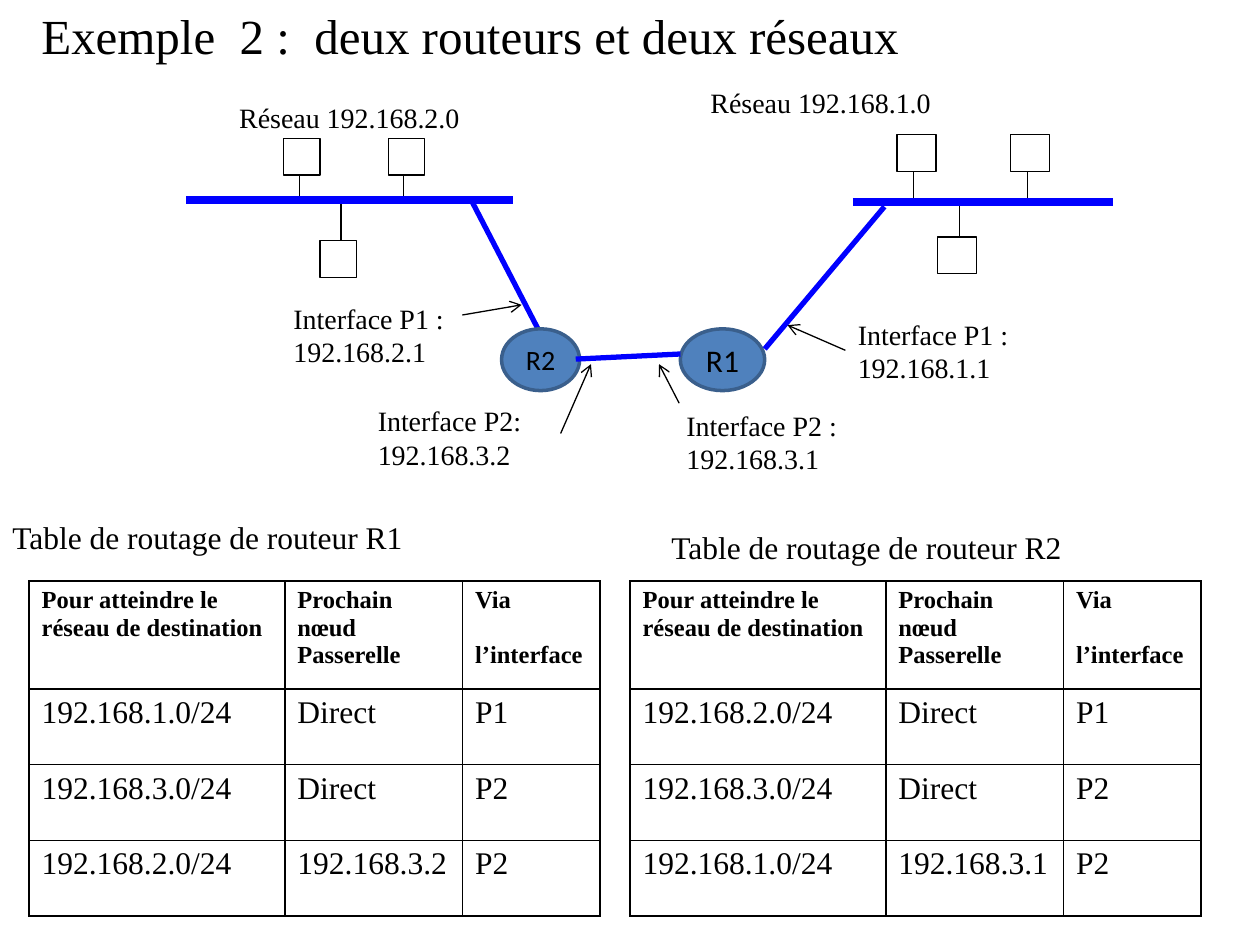
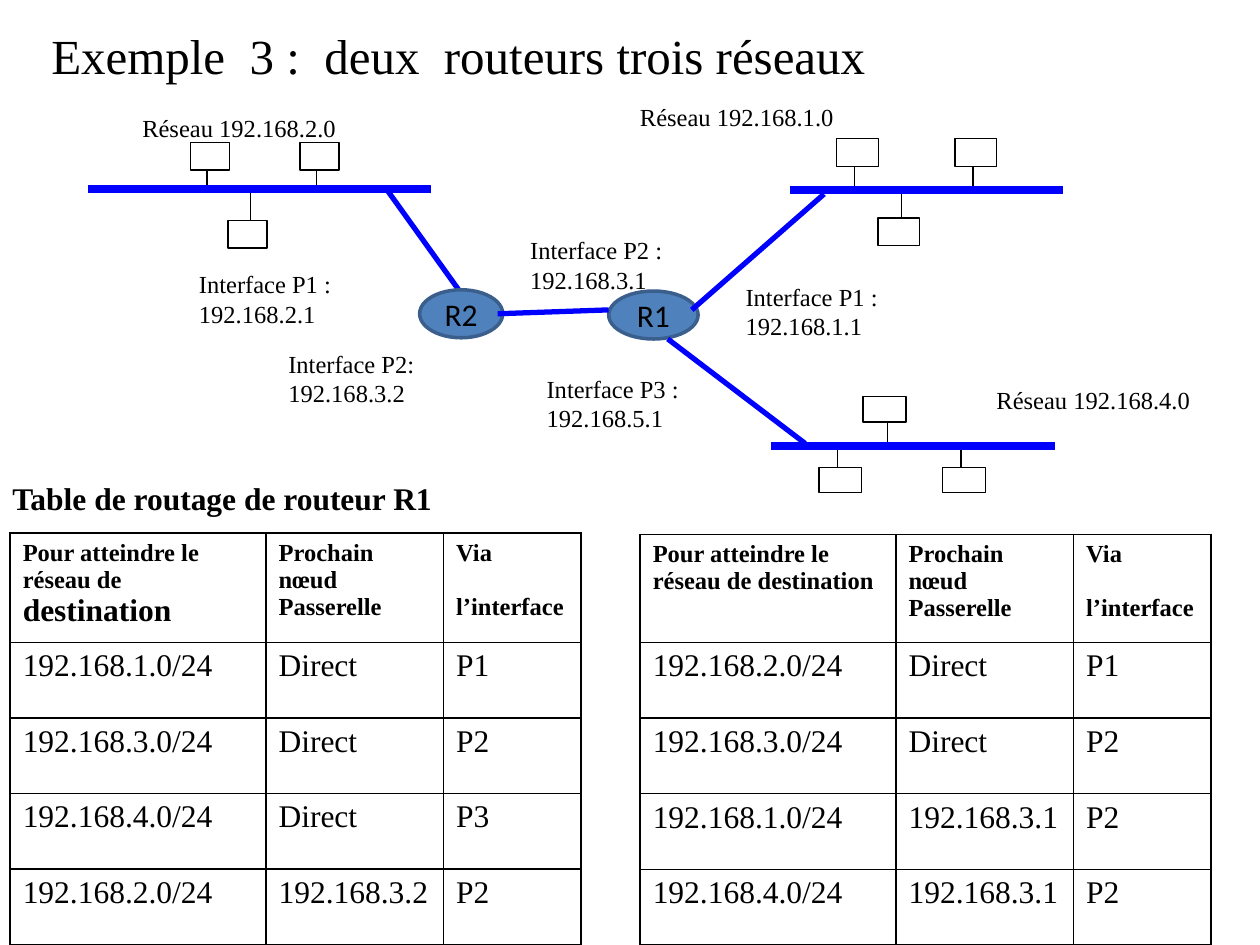
import pptx
import pptx.dml.color
import pptx.enum.shapes
import pptx.enum.text
import pptx.oxml
import pptx.oxml.ns
import pptx.util

Pt = pptx.util.Pt
SHAPE = pptx.enum.shapes.MSO_SHAPE
ANCHOR = pptx.enum.text.MSO_ANCHOR
ALIGN = pptx.enum.text.PP_ALIGN

# Shared style
SERIF, SANS = "Times New Roman", "Calibri"
BLACK, WHITE = "000000", "FFFFFF"
CABLE, ROUTER_FILL, ROUTER_LINE = "0000FF", "4F81BD", "3A5F8C"
COLUMNS = (146.2, 101.5, 78.5)
HEADER_HEIGHT, ROW_HEIGHT = 61.9, 43.2
HEADERS = (
    ("Pour atteindre le", "réseau de destination"),
    ("Prochain", "nœud Passerelle"),
    ("Via", "l’interface"),
)
# Where a stub meets its host, as a share of the host's width
PAIR_STUB, SINGLE_STUB = 0.43, 0.57


def color(hex_text):
    return pptx.dml.color.RGBColor.from_string(hex_text)


def set_font(p, size, name=SERIF, bold=False):
    p.font.name = name
    p.font.size = Pt(size)
    p.font.bold = bold
    p.font.color.rgb = color(BLACK)


def fill_lines(tf, lines, size, bold=False):
    for i, line_text in enumerate(lines):
        p = tf.paragraphs[0] if i == 0 else tf.add_paragraph()
        p.text = line_text
        set_font(p, size, bold=bold)


def text(s, x, y, w, h, lines, size, bold=False):
    tf = s.shapes.add_textbox(Pt(x), Pt(y), Pt(w), Pt(h)).text_frame
    tf.word_wrap = True
    tf.vertical_anchor = ANCHOR.MIDDLE
    fill_lines(tf, lines, size, bold)


def title(s, x, y, words):
    text(s, x, y, 648, 40.3, [words], 28)


def caption(s, x, y, router_name, bold=False):
    text(s, x, y, 280, 28.8, [f"Table de routage de routeur {router_name}"], 18, bold)


def network_label(s, x, y, address, size):
    text(s, x, y, size * 9.6, size * 1.7, [f"Réseau {address}"], size)


def interface_label(s, x, y, port, address, size):
    text(s, x, y, size * 7.2, size * 2.9, [f"Interface {port}", address], size)


def line(s, start, end, hex_text=BLACK, width=0.75, arrow=False):
    c = s.shapes.add_connector(
        pptx.enum.shapes.MSO_CONNECTOR.STRAIGHT, *map(Pt, start + end))
    c.line.color.rgb = color(hex_text)
    c.line.width = Pt(width)
    if arrow:
        ln = c.line._get_or_add_ln()
        ln.append(pptx.oxml.parse_xml(
            f'<a:tailEnd {pptx.oxml.ns.nsdecls("a")} type="arrow"/>'))
    c._element.spPr.append(pptx.oxml.parse_xml(
        f'<a:effectLst {pptx.oxml.ns.nsdecls("a")}/>'))


def link(s, start, end):
    line(s, start, end, CABLE, 3)


def shape(s, kind, x, y, w, h, fill, outline, width):
    sp = s.shapes.add_shape(kind, Pt(x), Pt(y), Pt(w), Pt(h))
    sp.shadow.inherit = False
    sp.fill.solid()
    sp.fill.fore_color.rgb = color(fill)
    sp.line.color.rgb = color(outline)
    sp.line.width = Pt(width)
    return sp


def router(s, x, y, w, h, name, size):
    sp = shape(s, SHAPE.OVAL, x, y, w, h, ROUTER_FILL, ROUTER_LINE, 2)
    tf = sp.text_frame
    tf.vertical_anchor = ANCHOR.MIDDLE
    p = tf.paragraphs[0]
    p.text = name
    p.alignment = ALIGN.CENTER
    set_font(p, size, SANS)


def network(s, bus, y, host, pair, pair_top, single, single_top, stub_y=None):
    """A bus from bus[0] to bus[1] with two hosts on one side, one on the other."""
    w, h = host
    stub_y = stub_y or y
    hosts = [(x, pair_top, PAIR_STUB) for x in pair]
    hosts.append((single, single_top, SINGLE_STUB))
    for x, top, share in hosts:
        shape(s, SHAPE.RECTANGLE, x, top, w, h, WHITE, BLACK, 0.75)
        edge = top + h if top < y else top
        line(s, (x + w * share, edge), (x + w * share, stub_y))
    line(s, (bus[0], y), (bus[1], y), CABLE, 4.5)


def style_cell(cell):
    tc_pr = cell._tc.get_or_add_tcPr()
    for side in ("lnL", "lnR", "lnT", "lnB"):
        tc_pr.append(pptx.oxml.parse_xml(
            f'<a:{side} {pptx.oxml.ns.nsdecls("a")} w="12700"><a:solidFill>'
            f'<a:srgbClr val="{BLACK}"/></a:solidFill></a:{side}>'))
    cell.fill.solid()
    cell.fill.fore_color.rgb = color(WHITE)


def routing_table(s, x, y, routes):
    height = HEADER_HEIGHT + ROW_HEIGHT * len(routes)
    table = s.shapes.add_table(len(routes) + 1, len(COLUMNS), Pt(x), Pt(y),
                               Pt(sum(COLUMNS)), Pt(height)).table
    table.horz_banding = False
    for column, width in zip(table.columns, COLUMNS):
        column.width = Pt(width)
    for i, row in enumerate(table.rows):
        row.height = Pt(ROW_HEIGHT if i else HEADER_HEIGHT)
    for j, lines in enumerate(HEADERS):
        fill_lines(table.cell(0, j).text_frame, lines, 14, True)
    table.cell(0, 2).text_frame.paragraphs[1].space_before = Pt(15.5)
    for i, route in enumerate(routes, 1):
        for j, value in enumerate(route):
            fill_lines(table.cell(i, j).text_frame, [value], 18)
    for cell in table.iter_cells():
        style_cell(cell)
    return table


def enlarge_last_word(p, size):
    first, last = p.text.rsplit(" ", 1)
    p.runs[0].text = first + " "
    r = p.add_run()
    r.text = last
    r.font.size = Pt(size)


def two_networks(s):
    # Networks and routers
    network_label(s, 129.6, 53.3, "192.168.2.0", 16)
    network_label(s, 398.9, 45, "192.168.1.0", 16)
    link(s, (268.6, 113), (307.4, 187.9))
    router(s, 286.6, 187.9, 44.6, 35.3, "R2", 16)
    router(s, 388.8, 187.9, 48.2, 35.3, "R1", 18)
    network(s, (106.5, 293), 114.5, (20.9, 20.9), (162, 221.8), 79.2,
            182.9, 137.5, stub_y=116.6)
    network(s, (487.4, 635.8), 115.2, (22.3, 20.9), (512.6, 577.4), 77,
            535.7, 135.4)
    link(s, (437, 199.4), (505.4, 118.1))
    link(s, (388.8, 202.3), (329, 205.2))

    # Interfaces
    for x, y, port, address in (
        (160.6, 168, "P1 :", "192.168.2.1"),
        (483.1, 177.2, "P1 :", "192.168.1.1"),
        (208.8, 226.8, "P2:", "192.168.3.2"),
        (385.2, 229.2, "P2 :", "192.168.3.1"),
    ):
        interface_label(s, x, y, port, address, 16)
    for start, end in (
        ((483.1, 200.2), (450, 185.8)),
        ((388.1, 230.4), (376.6, 208.1)),
        ((320.4, 247.7), (337.7, 208.1)),
        ((264.2, 180), (298.1, 174.2)),
    ):
        line(s, start, end, arrow=True)

    # Routing tables
    caption(s, 0, 292.3, "R1")
    routing_table(s, 16.6, 331.9, (
        ("192.168.1.0/24", "Direct", "P1"),
        ("192.168.3.0/24", "Direct", "P2"),
        ("192.168.2.0/24", "192.168.3.2", "P2"),
    ))
    caption(s, 376.6, 298.1, "R2")
    routing_table(s, 360, 331.9, (
        ("192.168.2.0/24", "Direct", "P1"),
        ("192.168.3.0/24", "Direct", "P2"),
        ("192.168.1.0/24", "192.168.3.1", "P2"),
    ))
    title(s, 16.6, 0, "Exemple  2 :  deux routeurs et deux réseaux")


def three_networks(s):
    # Networks and routers
    network_label(s, 74.2, 61.2, "192.168.2.0", 14)
    network_label(s, 358.6, 54.7, "192.168.1.0", 14)
    network_label(s, 562.3, 216.7, "192.168.4.0", 14)
    link(s, (220.3, 107.3), (262.1, 165.6))
    router(s, 239.8, 165.6, 47.5, 27.4, "R2", 18)
    router(s, 347.8, 166.3, 51.1, 27.4, "R1", 18)
    network(s, (50.4, 246.2), 108, (22.3, 15.8), (108.7, 171.4), 81.4,
            130.3, 126, stub_y=110.2)
    network(s, (451.4, 607.7), 108.7, (23.8, 15.8), (478.1, 545.8), 79.2,
            501.8, 124.6)
    network(s, (440.6, 602.6), 254.9, (24.5, 14.4), (468, 538.6), 267.1,
            493.2, 226.8)
    link(s, (347.8, 177.1), (284.4, 179.3))
    link(s, (395.3, 177.1), (470.9, 110.9))
    link(s, (381.6, 193.7), (460.1, 253.4))

    # Interfaces
    for x, y, port, address in (
        (106.6, 150.5, "P1 :", "192.168.2.1"),
        (419, 157.7, "P1 :", "192.168.1.1"),
        (157.7, 195.8, "P2:", "192.168.3.2"),
        (295.9, 131, "P2 :", "192.168.3.1"),
        (305.3, 210.2, "P3 :", "192.168.5.1"),
    ):
        interface_label(s, x, y, port, address, 14)

    # Routing tables
    caption(s, 0, 270, "R1", bold=True)
    table = routing_table(s, 5.8, 304.6, (
        ("192.168.1.0/24", "Direct", "P1"),
        ("192.168.3.0/24", "Direct", "P2"),
        ("192.168.4.0/24", "Direct", "P3"),
        ("192.168.2.0/24", "192.168.3.2", "P2"),
    ))
    enlarge_last_word(table.cell(0, 0).text_frame.paragraphs[1], 18)
    routing_table(s, 365.8, 305.3, (
        ("192.168.2.0/24", "Direct", "P1"),
        ("192.168.3.0/24", "Direct", "P2"),
        ("192.168.1.0/24", "192.168.3.1", "P2"),
        ("192.168.4.0/24", "192.168.3.1", "P2"),
    ))
    title(s, 22.3, 11.5, "Exemple  3 :  deux  routeurs trois réseaux")


def main():
    prs = pptx.Presentation()
    prs.slide_width, prs.slide_height = Pt(720), Pt(540)
    for build in (two_networks, three_networks):
        build(prs.slides.add_slide(prs.slide_layouts[6]))
    prs.save("out.pptx")


if __name__ == "__main__":
    main()
